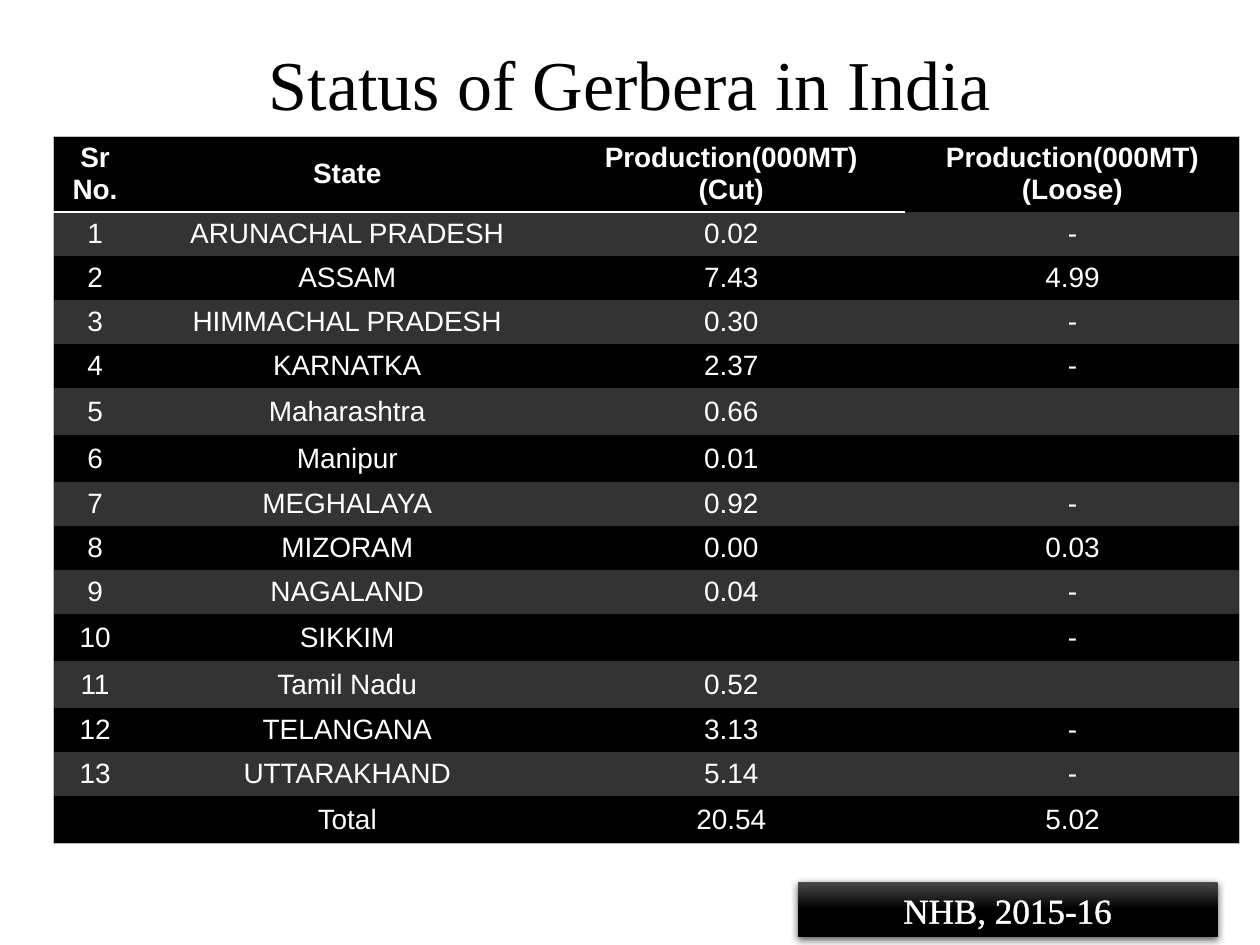
import pptx
import pptx.dml.color
import pptx.enum.shapes
import pptx.enum.text
import pptx.oxml
import pptx.oxml.ns
import pptx.util

WIDTH, HEIGHT = 10, 7.5
NO_STYLE = "{2D5ABB26-0587-4C30-8999-92F81FD0307C}"
HEADINGS = ["Sr No.", "State", "Production(000MT)\n(Cut)", "Production(000MT)\n(Loose)"]
STATES = [
    ("ARUNACHAL PRADESH", "0.02", "-"),
    ("ASSAM", "7.43", "4.99"),
    ("HIMMACHAL PRADESH", "0.30", "-"),
    ("KARNATKA", "2.37", "-"),
    ("Maharashtra", "0.66", ""),
    ("Manipur", "0.01", ""),
    ("MEGHALAYA", "0.92", "-"),
    ("MIZORAM", "0.00", "0.03"),
    ("NAGALAND", "0.04", "-"),
    ("SIKKIM", "", "-"),
    ("Tamil Nadu", "0.52", ""),
    ("TELANGANA", "3.13", "-"),
    ("UTTARAKHAND", "5.14", "-"),
]
TOTAL = ("", "Total", "20.54", "5.02")


def color(value):
    return pptx.dml.color.RGBColor.from_string(value)


def inches(*values):
    return [pptx.util.Inches(value) for value in values]


def xml(text):
    return pptx.oxml.parse_xml(text.replace(">", f" {pptx.oxml.ns.nsdecls('a')}>", 1))


def line_xml(tag, value, points):
    return xml(f'<a:{tag} w="{int(points * 12700)}"><a:solidFill>'
               f'<a:srgbClr val="{value}"/></a:solidFill></a:{tag}>')


def write(frame, text, size, font, value, bold=False):
    """Fill a text frame with centred paragraphs, one per line of text."""
    frame.vertical_anchor = pptx.enum.text.MSO_ANCHOR.MIDDLE
    for index, line in enumerate(text.split("\n")):
        paragraph = frame.add_paragraph() if index else frame.paragraphs[0]
        paragraph.alignment = pptx.enum.text.PP_ALIGN.CENTER
        if not line:
            # keeps an empty cell at the height of its row
            paragraph._p.append(xml(f'<a:endParaRPr sz="{size * 100}"></a:endParaRPr>'))
            continue
        run = paragraph.add_run()
        run.text = line
        run.font.size = pptx.util.Pt(size)
        run.font.name = font
        run.font.bold = bold
        run.font.color.rgb = color(value)


def place_title(slide, box):
    title = slide.shapes.title
    title.left, title.top, title.width, title.height = inches(*box)
    frame = title.text_frame
    frame.margin_left = frame.margin_right = frame.margin_top = frame.margin_bottom = 0
    frame.auto_size = pptx.enum.text.MSO_AUTO_SIZE.NONE
    write(frame, "Status of Gerbera in India", 40, "Times New Roman", "000000")
    frame.paragraphs[0].line_spacing = 0.93


def place_table(slide, box):
    rows = [HEADINGS]
    rows += [(str(number), *state) for number, state in enumerate(STATES, 1)]
    rows.append(TOTAL)
    last_row, last_column = len(rows) - 1, len(HEADINGS) - 1
    table = slide.shapes.add_table(len(rows), len(HEADINGS), *inches(*box)).table
    table._tbl.tblPr.find(pptx.oxml.ns.qn("a:tableStyleId")).text = NO_STYLE

    # column widths and row heights as shares of the box
    for column, share in zip(table.columns, (0.071, 0.354, 0.293, 0.282)):
        column.width = pptx.util.Inches(box[2] * share)
    header_height = 0.6
    for index, row in enumerate(table.rows):
        height = (box[3] - header_height) / last_row if index else header_height
        row.height = pptx.util.Inches(height)

    for row, values in enumerate(rows):
        for column, value in enumerate(values):
            cell = table.cell(row, column)
            write(cell.text_frame, value, 16, "Arial", "FFFFFF", bold=row == 0)
            cell.vertical_anchor = pptx.enum.text.MSO_ANCHOR.MIDDLE
            # thin outer frame, and a white rule under the headings
            borders = [("lnL", column == 0), ("lnR", column == last_column),
                       ("lnT", row == 0), ("lnB", row == last_row)]
            properties = cell._tc.get_or_add_tcPr()
            for tag, shown in borders:
                if shown:
                    properties.append(line_xml(tag, "BDBDBD", 0.5))
            if row == 0 and column < last_column:
                properties.append(line_xml("lnB", "FFFFFF", 1.5))
            cell.fill.solid()
            cell.fill.fore_color.rgb = color("333333" if row % 2 else "000000")


def place_source(slide, box):
    label = slide.shapes.add_shape(pptx.enum.shapes.MSO_SHAPE.RECTANGLE, *inches(*box))
    label.line.fill.background()
    label.fill.gradient()
    label.fill.gradient_angle = 270
    stops = label.fill.gradient_stops
    for stop, position, value in zip(stops, (0, 0.5), ("4B4B4B", "000000")):
        stop.position = position
        stop.color.rgb = color(value)
    label._element.spPr.append(xml(
        '<a:effectLst><a:outerShdw blurRad="57150" dist="19050" dir="5400000" '
        'algn="ctr" rotWithShape="0"><a:srgbClr val="000000"><a:alpha val="63000"/>'
        '</a:srgbClr></a:outerShdw></a:effectLst>'))
    write(label.text_frame, "NHB, 2015-16", 20, "Times New Roman", "FFFFFF")
    run = label.text_frame.paragraphs[0].runs[0]
    run._r.get_or_add_rPr().insert(0, line_xml("ln", "FFFFFF", 1.45))


def main():
    presentation = pptx.Presentation()
    presentation.slide_width, presentation.slide_height = inches(WIDTH, HEIGHT)
    slide = presentation.slides.add_slide(presentation.slide_layouts[5])
    place_title(slide, (WIDTH * 0.05, HEIGHT * 0.04, WIDTH * 0.9, 0.78))
    place_table(slide, (0.42, 1.08, 9.42, 5.5))
    place_source(slide, (6.33, 7, WIDTH / 3, 0.44))
    presentation.save("out.pptx")


if __name__ == "__main__":
    main()
